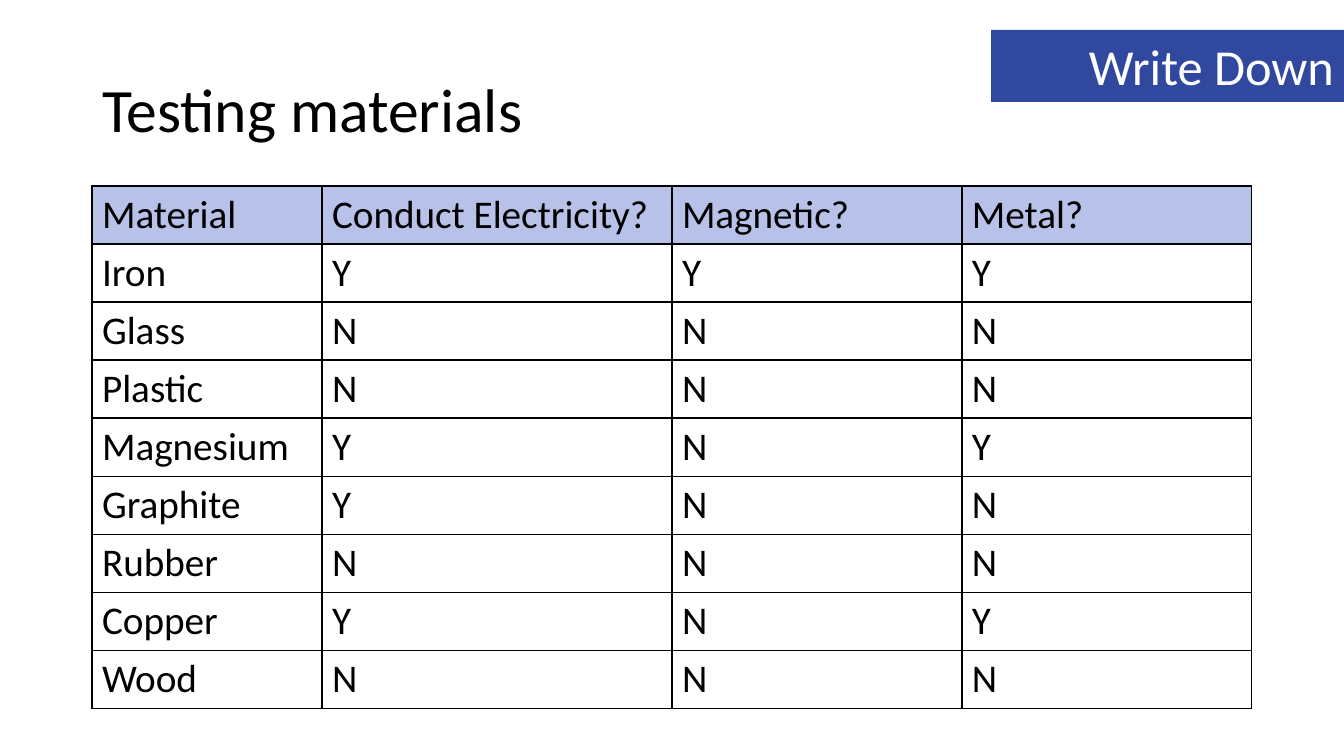
from lxml.etree import SubElement
from pptx import Presentation
from pptx.dml.color import RGBColor
from pptx.enum.shapes import MSO_SHAPE
from pptx.enum.text import MSO_ANCHOR as Anchor, PP_ALIGN as Align
from pptx.oxml.ns import qn
from pptx.util import Pt

EMU_PER_PX = 914400 / 100.8
FONT = "Calibri"
BLACK = "000000"
HEADER = ["Material", "Conduct Electricity?", "Magnetic?", "Metal?"]
RESULTS = {
    "Iron": "YYY",
    "Glass": "NNN",
    "Plastic": "NNN",
    "Magnesium": "YNY",
    "Graphite": "YNN",
    "Rubber": "NNN",
    "Copper": "YNY",
    "Wood": "NNN",
}
COLUMN_WIDTHS = [230, 350, 290, 290]
ROW_HEIGHT = 58


def px(length):
    return round(length * EMU_PER_PX)


def color(hex_value):
    return RGBColor.from_string(hex_value)


def write(frame, text, size, hex_value, align=Align.LEFT):
    frame.text = text
    paragraph = frame.paragraphs[0]
    paragraph.alignment = align
    font = paragraph.runs[0].font
    font.name = FONT
    font.size = Pt(size)
    font.color.rgb = color(hex_value)
    return paragraph


def add_title(slide, text):
    title = slide.shapes.title
    title.left, title.top, title.width, title.height = map(px, (92, 40, 1160, 146))
    title.text_frame.vertical_anchor = Anchor.MIDDLE
    write(title.text_frame, text, 44, BLACK).line_spacing = 0.9


def add_banner(slide, text):
    banner = slide.shapes.add_shape(MSO_SHAPE.RECTANGLE, *map(px, (991, 30, 353, 72)))
    banner.shadow.inherit = False
    banner.fill.solid()
    banner.fill.fore_color.rgb = color("31489F")
    banner.line.fill.background()
    banner.text_frame.vertical_anchor = Anchor.TOP
    write(banner.text_frame, text, 36, "FFFFFF", Align.RIGHT)


def add_borders(cell):
    properties = cell._tc.get_or_add_tcPr()
    for side in ("lnL", "lnR", "lnT", "lnB"):
        border = SubElement(properties, qn(f"a:{side}"), w=str(Pt(1)))
        fill = SubElement(border, qn("a:solidFill"))
        SubElement(fill, qn("a:srgbClr"), val=BLACK)


def add_results_table(slide):
    rows = [HEADER] + [[material, *answers] for material, answers in RESULTS.items()]
    size = (sum(COLUMN_WIDTHS), ROW_HEIGHT * len(rows))
    table = slide.shapes.add_table(
        len(rows), len(HEADER), *map(px, (92, 186, *size))
    ).table
    table.first_row = False
    table.horz_banding = False
    for column, width in zip(table.columns, COLUMN_WIDTHS):
        column.width = px(width)
    for row_index, values in enumerate(rows):
        table.rows[row_index].height = px(ROW_HEIGHT)
        for column_index, value in enumerate(values):
            cell = table.cell(row_index, column_index)
            write(cell.text_frame, value, 28, BLACK)
            add_borders(cell)
            if row_index == 0:
                cell.fill.solid()
                cell.fill.fore_color.rgb = color("B8C2E9")
            else:
                cell.fill.background()


def main():
    deck = Presentation()
    deck.slide_width, deck.slide_height = px(1344), px(756)
    slide = deck.slides.add_slide(deck.slide_layouts[5])
    add_title(slide, "Testing materials")
    add_results_table(slide)
    add_banner(slide, "Write Down")
    deck.save("out.pptx")


if __name__ == "__main__":
    main()
